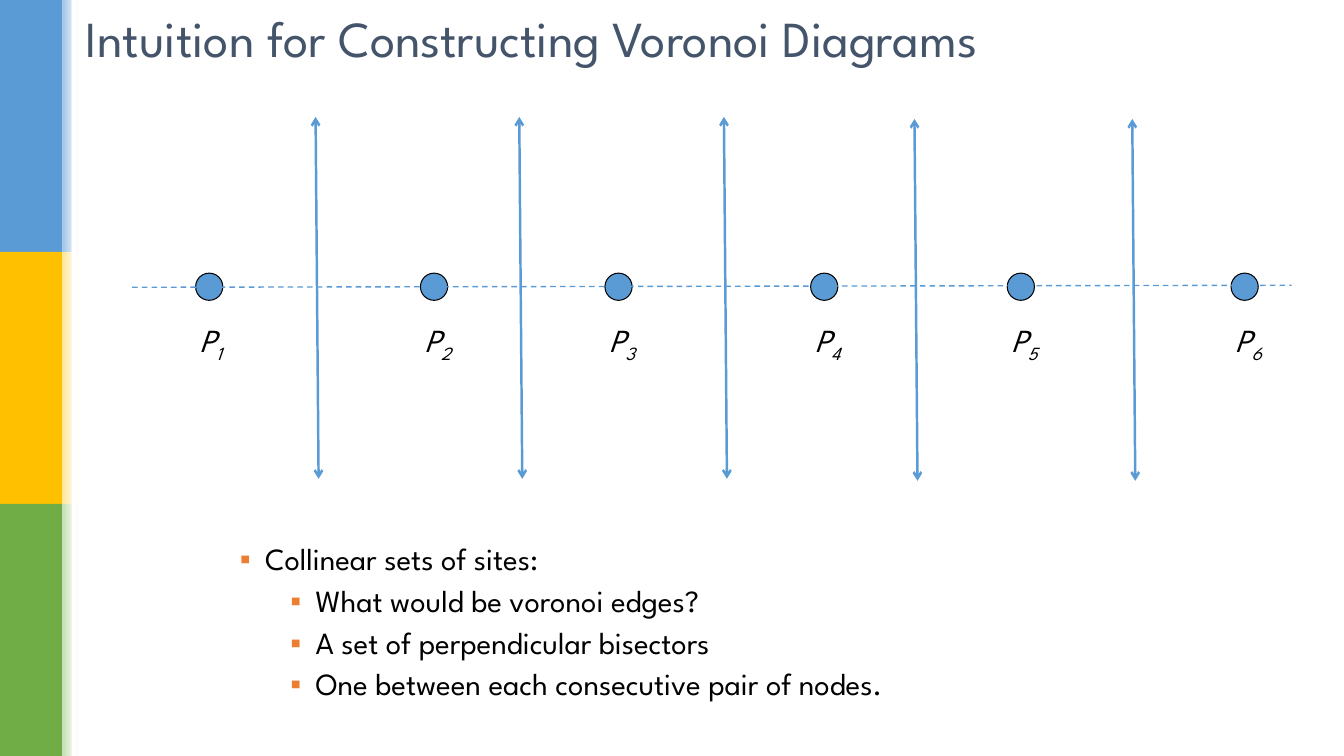
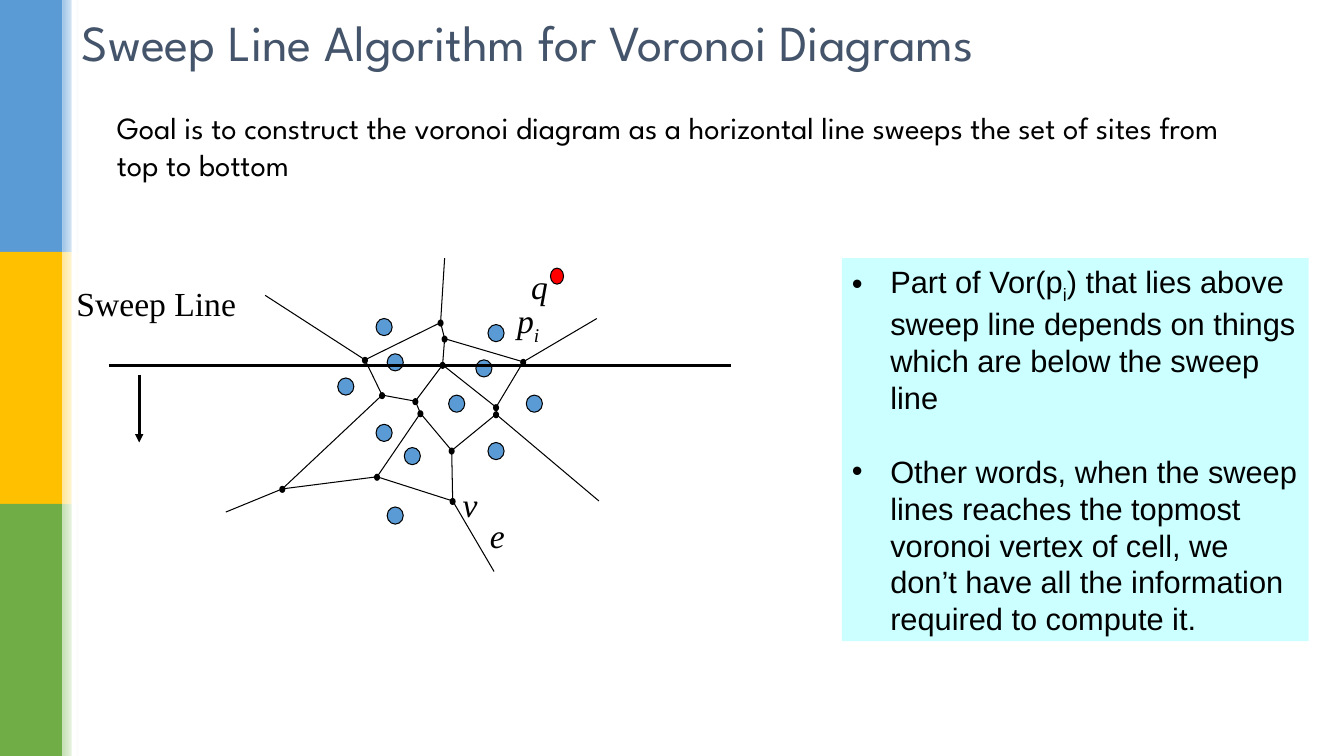
import pptx
import pptx.dml.color
import pptx.enum.dml
import pptx.enum.shapes
import pptx.enum.text
import pptx.oxml
import pptx.oxml.ns
import pptx.util
import lxml.etree

PX = 9144  # 100 px to the inch
BLUE, YELLOW, GREEN = "5B9BD5", "FFC000", "70AD47"
BLACK, WHITE, RED = "000000", "FFFFFF", "FF0000"
SLATE, ORANGE, CYAN = "44546A", "ED7D31", "CCFFFF"

TITLE = {"name": "League Spartan", "size": pptx.util.Pt(36)}
BODY = {"name": "League Spartan", "size": pptx.util.Pt(22)}
SITE_LABEL = {"name": "League Spartan", "size": pptx.util.Pt(23), "italic": True}
NOTE = {"name": "Arial", "size": pptx.util.Pt(22)}
CAPTION = {"name": "Times New Roman", "size": pptx.util.Pt(24)}
SYMBOL = {**CAPTION, "italic": True}


def color(value):
    return pptx.dml.color.RGBColor.from_string(value)


def write(paragraph, pieces, font_format, font_color=BLACK):
    """Write the pieces as runs; every second piece is a subscript."""
    for index, piece in enumerate(pieces):
        run = paragraph.add_run()
        run.text = piece
        for name, value in font_format.items():
            setattr(run.font, name, value)
        run.font.color.rgb = color(font_color)
        if index % 2:
            run._r.get_or_add_rPr().set("baseline", "-25000")


presentation = pptx.Presentation()
presentation.slide_width = 1333 * PX
presentation.slide_height = 750 * PX
layout = presentation.slide_layouts[1]

# Titles
titles = [
    ("Intuition for Constructing Voronoi Diagrams", (75, 0, 1131, 75)),
    ("Sweep Line Algorithm for Voronoi Diagrams", (71, 0, 1092, 83)),
]
for text, box in titles:
    title = presentation.slides.add_slide(layout).shapes.title
    title.left, title.top, title.width, title.height = [n * PX for n in box]
    frame = title.text_frame
    frame.auto_size = pptx.enum.text.MSO_AUTO_SIZE.NONE
    frame.vertical_anchor = pptx.enum.text.MSO_ANCHOR.MIDDLE
    frame.paragraphs[0].alignment = pptx.enum.text.PP_ALIGN.LEFT
    write(frame.paragraphs[0], [text], TITLE, SLATE)
collinear, sweep = presentation.slides

# Side bands, shared through the layout
bands = []
for row, (solid, tint) in enumerate([(BLUE, "9DC3E6"), (YELLOW, "FFE699"), (GREEN, "C5E0B4")]):
    bands += [((0, row * 250, 62, 250), [solid]), ((62, row * 250, 16, 250), [tint, WHITE])]
bands.append(((71, 0, 5, 750), [WHITE]))
for box, colors in bands:
    band = collinear.shapes.add_shape(
        pptx.enum.shapes.MSO_SHAPE.RECTANGLE, *[n * PX for n in box])
    band.shadow.inherit = False
    band.line.fill.background()
    if len(colors) == 1:
        band.fill.solid()
        band.fill.fore_color.rgb = color(colors[0])
    else:
        band.fill.gradient()
        band.fill.gradient_angle = 0
        for position, (stop, value) in enumerate(zip(band.fill.gradient_stops, colors)):
            stop.position = position
            stop.color.rgb = color(value)
    layout.shapes.element.append(band.element)

# Collinear sites and their bisectors
ovals, lines, labels = [], [], []
for number, left in enumerate([194, 417, 600, 804, 999, 1221], start=1):
    ovals.append((collinear, (left, 271, 27, 27), BLUE, True))
    labels.append((collinear, (left - 6, 313, 65, 49), ["P", str(number)], SITE_LABEL, True))

bisector = {"color": BLUE, "width": 1.75, "head": "arrow", "tail": "arrow"}
for left, top in [(313, 116), (515, 116), (718, 116), (907, 118), (1123, 118)]:
    lines.append((collinear, (left, top), (left + 3, top + 359), bisector))
lines.append((collinear, (131, 285), (1281, 283), {"color": BLUE, "width": 1, "dash": True}))

# Voronoi diagram: vertices, edges and open ends
vertices = {
    "top": (437, 320), "upper": (441, 336), "west": (362, 357), "east": (519, 359),
    "center": (439, 362), "inner west": (379, 392), "inner": (412, 398),
    "inner low": (417, 410), "fork": (492, 404), "fork low": (492, 411),
    "low": (448, 447), "south west": (374, 473), "far west": (280, 485), "bottom": (449, 497),
}
edges = [
    ("upper", "top"), ("inner", "inner low"), ("inner", "center"), ("low", "fork low"),
    ("fork low", "fork"), ("west", "inner west"), ("inner west", "far west"),
    ("far west", "south west"), ("south west", "inner low"), ("inner west", "inner"),
    ("center", "fork"), ("inner low", "low"), ("south west", "bottom"), ("bottom", "low"),
    ("center", "upper"), ("west", "top"), ("upper", "east"), ("fork", "east"),
]
rays = [
    ("west", (263, 293)), ("far west", (224, 508)), ("bottom", (490, 567)),
    ("fork low", (594, 497)), ("east", (592, 316)), ("top", (441, 256)),
]
edge_style = {"color": BLACK, "width": 0.75}
for start, end in edges:
    lines.append((sweep, vertices[start], vertices[end], edge_style))
for start, end in rays:
    lines.append((sweep, vertices[start], end, edge_style))
for x, y in vertices.values():
    ovals.append((sweep, (x - 3, y - 3, 6, 7), BLACK, False))

# Sites and query point
sites = [
    (384, 503), (401, 444), (445, 392), (484, 439), (522, 392), (472, 357),
    (484, 322), (373, 421), (335, 375), (384, 351), (373, 316),
]
for left, top in sites:
    ovals.append((sweep, (left, top, 16, 17), BLUE, True))
ovals.append((sweep, (546, 266, 13, 16), RED, True))

# Sweep line and its direction
lines.append((sweep, (108, 363), (725, 363), {"color": BLACK, "width": 2}))
lines.append((sweep, (138, 372), (138, 439), {"color": BLACK, "width": 2, "tail": "triangle"}))

labels += [
    (sweep, (476, 506, 35, 50), ["e"], SYMBOL, False),
    (sweep, (449, 475, 35, 50), ["v"], SYMBOL, False),
    (sweep, (503, 293, 43, 50), ["p", "i"], SYMBOL, False),
    (sweep, (517, 259, 37, 50), ["q"], SYMBOL, False),
    (sweep, (66, 276, 178, 50), ["Sweep Line"], CAPTION, False),
    (sweep, (106, 103, 1135, 84),
     ["Goal is to construct the voronoi diagram as a horizontal line sweeps "
      "the set of sites from top to bottom"], BODY, True),
]

# Draw ovals, lines and labels
for slide, box, fill, outlined in ovals:
    oval = slide.shapes.add_shape(pptx.enum.shapes.MSO_SHAPE.OVAL, *[n * PX for n in box])
    oval.shadow.inherit = False
    oval.fill.solid()
    oval.fill.fore_color.rgb = color(fill)
    if outlined:
        oval.line.color.rgb = color(BLACK)
        oval.line.width = pptx.util.Pt(0.75)
    else:
        oval.line.fill.background()

for slide, start, end, style in lines:
    connector = slide.shapes.add_connector(
        pptx.enum.shapes.MSO_CONNECTOR.STRAIGHT, *[n * PX for n in start + end])
    connector.line.color.rgb = color(style["color"])
    connector.line.width = pptx.util.Pt(style["width"])
    if style.get("dash"):
        connector.line.dash_style = pptx.enum.dml.MSO_LINE.DASH
    properties = connector.element.spPr
    outline = properties.find(pptx.oxml.ns.qn("a:ln"))
    for side in ("head", "tail"):
        if side in style:
            arrowhead = lxml.etree.SubElement(outline, pptx.oxml.ns.qn(f"a:{side}End"))
            arrowhead.set("type", style[side])
    lxml.etree.SubElement(properties, pptx.oxml.ns.qn("a:effectLst"))

for slide, box, pieces, font_format, wrap in labels:
    frame = slide.shapes.add_textbox(*[n * PX for n in box]).text_frame
    frame.word_wrap = wrap
    write(frame.paragraphs[0], pieces, font_format)

# Bulleted lists: text pieces, level, left margin
square_list = {
    "box": (228, 535, 825, 215), "bullet": "▪", "bullet color": ORANGE, "hanging": 25,
    "font": BODY, "line": 0.9, "before": 0, "after": 6,
    "items": [
        (["Collinear sets of sites:"], 0, 25),
        (["What would be voronoi edges?"], 1, 75),
        (["A set of perpendicular bisectors"], 1, 75),
        (["One between each consecutive pair of nodes."], 1, 75),
    ],
}
note_list = {
    "box": (835, 256, 463, 380), "bullet": "•", "bullet color": BLACK, "hanging": 38,
    "font": NOTE, "line": 1.0, "before": 26, "after": 0, "fill": CYAN,
    "items": [
        (["Part of Vor(p", "i", ") that lies above sweep line depends on things "
          "which are below the sweep line"], 0, 38),
        (["Other words, when the sweep lines reaches the topmost voronoi vertex of cell, "
          "we don’t have all the information required to compute it."], 0, 38),
    ],
}
for slide, content in [(collinear, square_list), (sweep, note_list)]:
    body = slide.placeholders[1]
    body.left, body.top, body.width, body.height = [n * PX for n in content["box"]]
    if "fill" in content:
        body.fill.solid()
        body.fill.fore_color.rgb = color(content["fill"])
    frame = body.text_frame
    frame.auto_size = pptx.enum.text.MSO_AUTO_SIZE.NONE
    frame.vertical_anchor = pptx.enum.text.MSO_ANCHOR.TOP
    for index, (pieces, level, margin) in enumerate(content["items"]):
        paragraph = frame.add_paragraph() if index else frame.paragraphs[0]
        spacing = {
            "level": level,
            "line_spacing": content["line"],
            "space_before": pptx.util.Pt(content["before"] if index else 0),
            "space_after": pptx.util.Pt(content["after"]),
        }
        for name, value in spacing.items():
            setattr(paragraph, name, value)
        properties = paragraph._p.get_or_add_pPr()
        properties.set("marL", str(margin * PX))
        properties.set("indent", str(-content["hanging"] * PX))
        bullet_color = lxml.etree.SubElement(properties, pptx.oxml.ns.qn("a:buClr"))
        lxml.etree.SubElement(bullet_color, pptx.oxml.ns.qn("a:srgbClr")).set(
            "val", content["bullet color"])
        lxml.etree.SubElement(properties, pptx.oxml.ns.qn("a:buChar")).set(
            "char", content["bullet"])
        write(paragraph, pieces, content["font"])

presentation.save("out.pptx")
